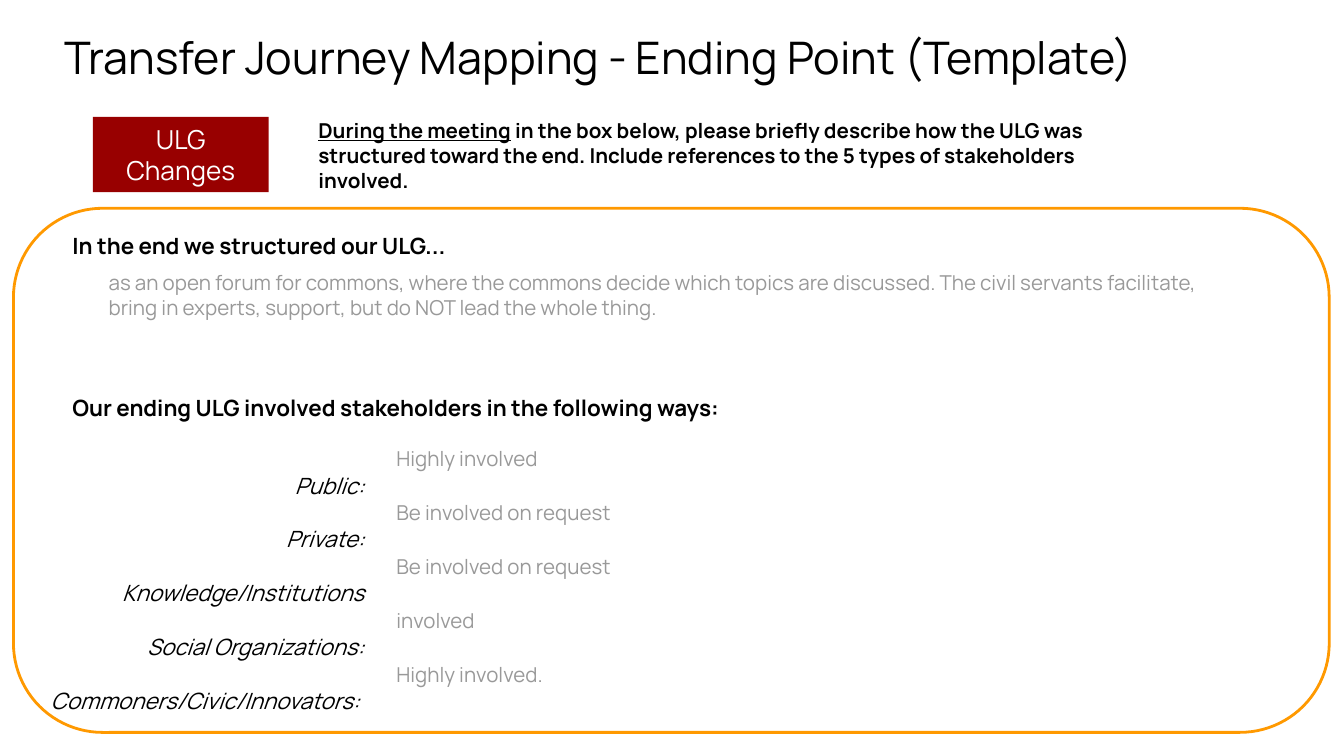
from pptx import Presentation
from pptx.dml.color import RGBColor
from pptx.enum.shapes import MSO_SHAPE as Shape
from pptx.enum.text import MSO_ANCHOR as Anchor, PP_ALIGN as Align
from pptx.util import Inches, Pt

COLORS = {"ink": "000000", "hint": "999999", "label": "980000",
          "frame": "FF9900", "white": "FFFFFF"}


def write(shape, lines, size, color="ink", bold=None, italic=None,
          align=Align.LEFT, spacing=None):
    frame = shape.text_frame
    frame.word_wrap = True
    frame.margin_left = frame.margin_right = Inches(0.1)
    frame.margin_top = frame.margin_bottom = Inches(0.1)
    for i, line in enumerate(lines):
        paragraph = frame.paragraphs[0] if i == 0 else frame.add_paragraph()
        paragraph.alignment = align
        paragraph.line_spacing = spacing
        font = paragraph.font
        font.name, font.size = "Manrope", Pt(size)
        font.bold, font.italic = bold, italic
        font.color.rgb = RGBColor.from_string(COLORS[color])
        paragraph.add_run().text = line
    return frame


def add_text(left, top, width, height, lines, size, **style):
    box = slide.shapes.add_textbox(Inches(left), Inches(top), Inches(width), Inches(height))
    return write(box, lines, size, **style)


# Widescreen slide, 16:9
prs = Presentation()
prs.slide_width = Inches(10)
prs.slide_height = Inches(10 * 9 / 16)
slide = prs.slides.add_slide(prs.slide_layouts[6])

# Title
add_text(0.38, 0.12, 9.13, 0.75, ["Transfer Journey Mapping - Ending Point (Template)"], 24)

# Section label
label = slide.shapes.add_shape(Shape.RECTANGLE, Inches(0.69), Inches(0.87),
                               Inches(1.31), Inches(0.56))
label.shadow.inherit = False
label.fill.solid()
label.fill.fore_color.rgb = RGBColor.from_string(COLORS["label"])
label.line.fill.background()
write(label, ["ULG", "Changes"], 14, color="white", align=Align.CENTER)
label.text_frame.vertical_anchor = Anchor.MIDDLE

# Answer frame
answer = slide.shapes.add_shape(Shape.ROUNDED_RECTANGLE, Inches(0.1), Inches(1.55),
                                Inches(9.79), Inches(3.9))
answer.shadow.inherit = False
answer.adjustments[0] = 0.17
answer.fill.background()
answer.line.color.rgb = RGBColor.from_string(COLORS["frame"])
answer.line.width = Pt(1.5)

# Instructions
instructions = add_text(2.27, 0.78, 6.2, 0.85, ["During the meeting"], 11, bold=True).paragraphs[0]
instructions.runs[0].font.underline = True
instructions.add_run().text = (
    " in the box below, please briefly describe how the ULG was structured toward the end."
    " Include references to the 5 types of stakeholders involved.")

# Structure of the group
add_text(0.44, 1.63, 3.92, 0.39, ["In the end we structured our ULG..."], 12, bold=True)
add_text(0.71, 1.91, 8.49, 0.85, [
    "as an open forum for commons, where the commons decide which topics are discussed."
    " The civil servants facilitate, bring in experts, support, but do NOT lead the whole thing.",
], 11, color="hint")

# Stakeholders and their involvement
add_text(0.44, 2.83, 5.74, 0.39,
         ["Our ending ULG involved stakeholders in the following ways:"], 12, bold=True)
stakeholders = [
    ("Public:", "Highly involved"),
    ("Private:", "Be involved on request"),
    ("Knowledge/Institutions", "Be involved on request"),
    ("Social Organizations:", "involved"),
    ("Commoners/Civic/Innovators: ", "Highly involved."),
]
add_text(0.13, 3.21, 2.68, 1.98, [group for group, _ in stakeholders], 12,
         italic=True, align=Align.RIGHT, spacing=2.0)
for row, (_, involvement) in enumerate(stakeholders):
    add_text(2.85, 3.23 + 0.4 * row, 6.89, 0.28, [involvement], 11, color="hint")

prs.save("out.pptx")
